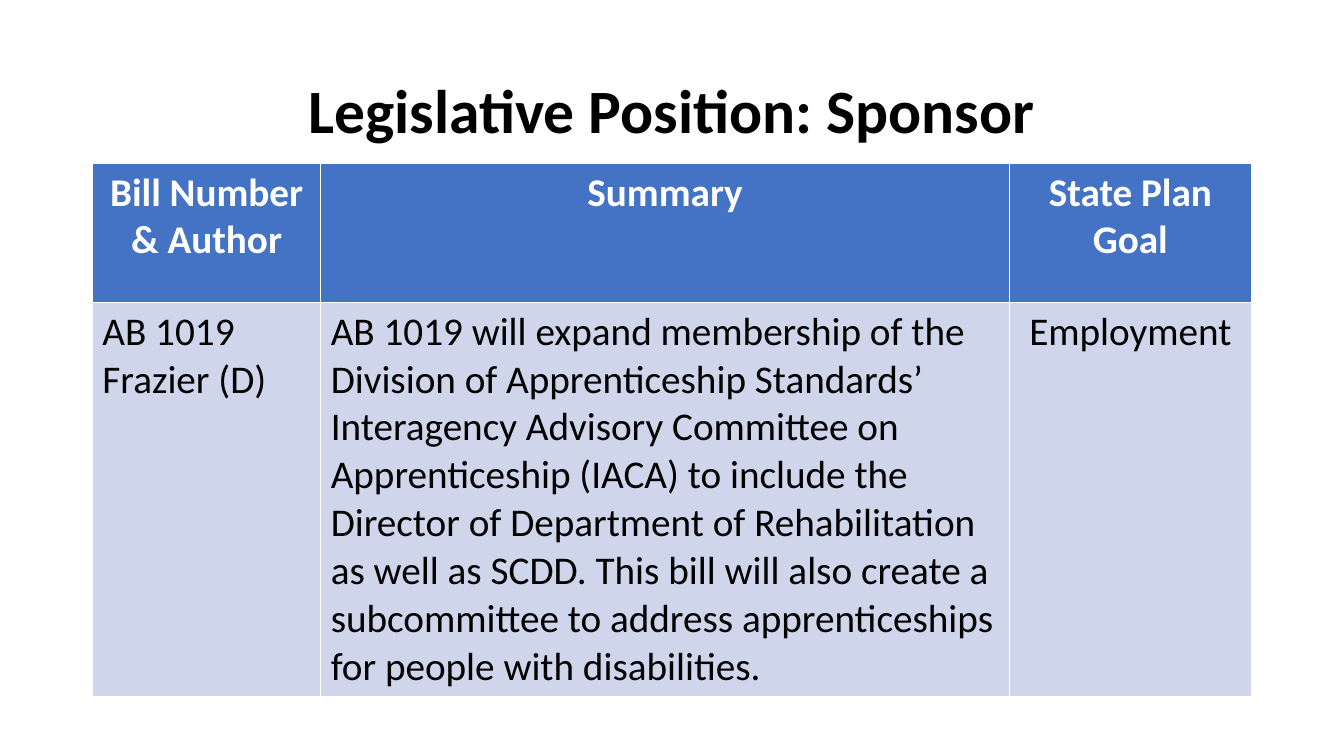
"""Build a slide with a table of sponsored legislation."""
from dataclasses import dataclass

from pptx import Presentation
from pptx import util as u
from pptx.dml import color
from pptx.enum import text


@dataclass(frozen=True)
class Theme:
    """Colours, font and type sizes of the slide."""
    font: str = "Calibri"
    ink: str = "000000"
    light: str = "FFFFFF"
    header: str = "4472C4"
    body: str = "CFD5EA"
    title_size: int = 44
    table_size: int = 28


@dataclass(frozen=True)
class Box:
    """A region of the slide, in points."""
    left: float
    top: float
    width: float
    height: float

    def lengths(self):
        """Return the position and size as lengths."""
        return [u.Pt(value) for value in (self.left, self.top, self.width, self.height)]


THEME = Theme()
CENTER, LEFT = text.PP_ALIGN.CENTER, text.PP_ALIGN.LEFT
HEADINGS = ["Bill Number & Author", "Summary", "State Plan Goal"]
BILL = [
    "AB 1019\nFrazier (D)",
    "AB 1019 will expand membership of the Division of Apprenticeship Standards’ "
    "Interagency Advisory Committee on Apprenticeship (IACA) to include the Director "
    "of Department of Rehabilitation as well as SCDD. This bill will also create a "
    "subcommittee to address apprenticeships for people with disabilities.",
    "Employment",
]
COLUMN_SHARES = [0.197, 0.594, 0.209]
HEADER_HEIGHT = 99.4


def write(frame, words, size, ink, bold, align):
    """Fill a text frame and format its runs."""
    frame.text = words
    for para in frame.paragraphs:
        para.alignment = align
        for span in para.runs:
            span.font.name = THEME.font
            span.font.size = u.Pt(size)
            span.font.bold = bold
            span.font.color.rgb = color.RGBColor.from_string(ink)


def place_title(page, box, words):
    """Place the slide title in its box."""
    title = page.shapes.title
    title.left, title.top, title.width, title.height = box.lengths()
    frame = title.text_frame
    write(frame, words, THEME.title_size, THEME.ink, True, CENTER)
    frame.vertical_anchor = text.MSO_ANCHOR.MIDDLE
    frame.paragraphs[0].line_spacing = 0.9


def place_bill_table(page, box):
    """Place the table of bills in its box."""
    rows = [HEADINGS, BILL]
    table = page.shapes.add_table(len(rows), len(HEADINGS), *box.lengths()).table
    for column, share in zip(table.columns, COLUMN_SHARES):
        column.width = u.Pt(box.width * share)
    table.rows[0].height = u.Pt(HEADER_HEIGHT)
    table.rows[1].height = u.Pt(box.height - HEADER_HEIGHT)
    body_aligns = [LEFT, LEFT, CENTER]
    styles = [
        (THEME.header, THEME.light, True, [CENTER] * len(HEADINGS)),
        (THEME.body, THEME.ink, False, body_aligns),
    ]
    for row, values, (fill, ink, bold, aligns) in zip(table.rows, rows, styles):
        for cell, words, align in zip(row.cells, values, aligns):
            cell.fill.solid()
            cell.fill.fore_color.rgb = color.RGBColor.from_string(fill)
            write(cell.text_frame, words, THEME.table_size, ink, bold, align)


def main():
    """Build and save the deck."""
    deck = Presentation()
    deck.slide_width, deck.slide_height = u.Pt(960), u.Pt(540)
    page = deck.slides.add_slide(deck.slide_layouts.get_by_name("Title Only"))
    place_title(page, Box(66, 28.8, 828, 104.4), "Legislative Position: Sponsor")
    place_bill_table(page, Box(66, 116.9, 828, 380))
    deck.save("out.pptx")


if __name__ == "__main__":
    main()
